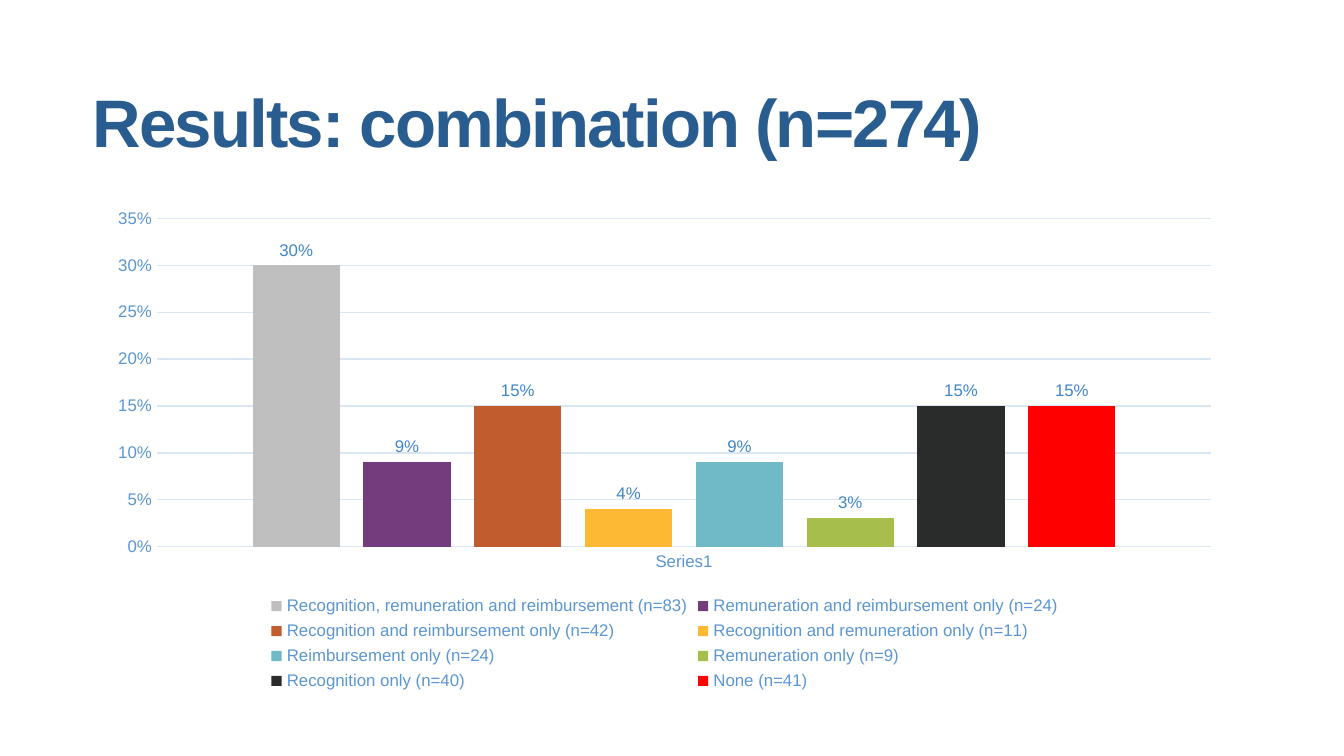
from pptx import Presentation
from pptx.chart.data import CategoryChartData
from pptx.dml.color import RGBColor
from pptx.enum import chart as charts, text
from pptx.util import Inches, Pt

TITLE = "Results: combination (n=274)"
TOTAL = 274
CATEGORY = "Series1"
# Combination, number of answers, bar colour
GROUPS = [
    ("Recognition, remuneration and reimbursement", 83, "BFBFBF"),
    ("Remuneration and reimbursement only", 24, "723C7D"),
    ("Recognition and reimbursement only", 42, "C15C2E"),
    ("Recognition and remuneration only", 11, "FDB933"),
    ("Reimbursement only", 24, "70B9C6"),
    ("Remuneration only", 9, "A6BE4B"),
    ("Recognition only", 40, "2A2B2B"),
    ("None", 41, "FF0000"),
]

THEME = {
    "title": {"name": "Arial", "size": Pt(36), "bold": True, "color": "295D90"},
    "chart": {"name": "Arial", "size": Pt(10), "bold": False, "color": "295D90"},
    "axis": {"name": "Arial", "size": Pt(9), "bold": False, "color": "5B96D0"},
    "label": {"name": "Arial", "size": Pt(9), "bold": False, "color": "4186C9"},
    "grid": {"color": "D9E7F4", "width": Pt(0.75)},
    "title spacing": -100,  # hundredths of a point
}
PAGE_WIDTH = Inches(10)
PAGE_HEIGHT = PAGE_WIDTH * 9 // 16
TITLE_BOX = [Inches(n) for n in (0.69, 0.11, 8.45, 1.09)]
CHART_BOX = [Inches(n) for n in (0.71, 1.48, 8.47, 3.7)]


def apply(target, **values):
    for name, value in values.items():
        setattr(target, name, value)


def style_font(font, role):
    values = dict(THEME[role])
    font.color.rgb = RGBColor.from_string(values.pop("color"))
    apply(font, **values)


def style_line(line):
    line.color.rgb = RGBColor.from_string(THEME["grid"]["color"])
    line.width = THEME["grid"]["width"]


def add_title(page):
    title = page.shapes.title
    apply(title, **dict(zip(("left", "top", "width", "height"), TITLE_BOX)))
    frame = title.text_frame
    apply(frame, margin_left=0, margin_top=0, margin_right=0, margin_bottom=0,
          word_wrap=True, auto_size=text.MSO_AUTO_SIZE.NONE,
          vertical_anchor=text.MSO_ANCHOR.BOTTOM)
    para = frame.paragraphs[0]
    para.alignment = text.PP_ALIGN.LEFT
    span = para.add_run()
    span.text = TITLE
    style_font(span.font, "title")
    span.font._element.set("spc", str(THEME["title spacing"]))


def style_axes(chart):
    for axis in (chart.category_axis, chart.value_axis):
        apply(axis, major_tick_mark=charts.XL_TICK_MARK.NONE,
              minor_tick_mark=charts.XL_TICK_MARK.NONE)
        style_font(axis.tick_labels.font, "axis")
    style_line(chart.category_axis.format.line)
    values = chart.value_axis
    apply(values, minimum_scale=0, maximum_scale=0.35, major_unit=0.05,
          has_major_gridlines=True)
    apply(values.tick_labels, number_format="0%", number_format_is_linked=False)
    values.format.line.fill.background()
    style_line(values.major_gridlines.format.line)


def add_chart(page):
    data = CategoryChartData(number_format="0%")
    data.categories = [CATEGORY]
    for name, count, _ in GROUPS:
        data.add_series(f"{name} (n={count})", [round(count / TOTAL, 2)])
    chart = page.shapes.add_chart(
        charts.XL_CHART_TYPE.COLUMN_CLUSTERED, *CHART_BOX, data).chart
    apply(chart, has_title=False, has_legend=True)
    style_font(chart.font, "chart")
    apply(chart.legend, position=charts.XL_LEGEND_POSITION.BOTTOM,
          include_in_layout=False)
    style_font(chart.legend.font, "axis")
    style_axes(chart)

    plot = chart.plots[0]
    apply(plot, gap_width=219, overlap=-27, vary_by_categories=False)
    for series, (_, _, color) in zip(plot.series, GROUPS):
        series.format.fill.solid()
        series.format.fill.fore_color.rgb = RGBColor.from_string(color)
        labels = series.data_labels
        apply(labels, show_value=True, number_format="0%",
              number_format_is_linked=False,
              position=charts.XL_LABEL_POSITION.OUTSIDE_END)
        style_font(labels.font, "label")


def main():
    deck = Presentation()
    apply(deck, slide_width=PAGE_WIDTH, slide_height=PAGE_HEIGHT)
    page = deck.slides.add_slide(deck.slide_layouts.get_by_name("Title Only"))
    add_title(page)
    add_chart(page)
    deck.save("out.pptx")


if __name__ == "__main__":
    main()
